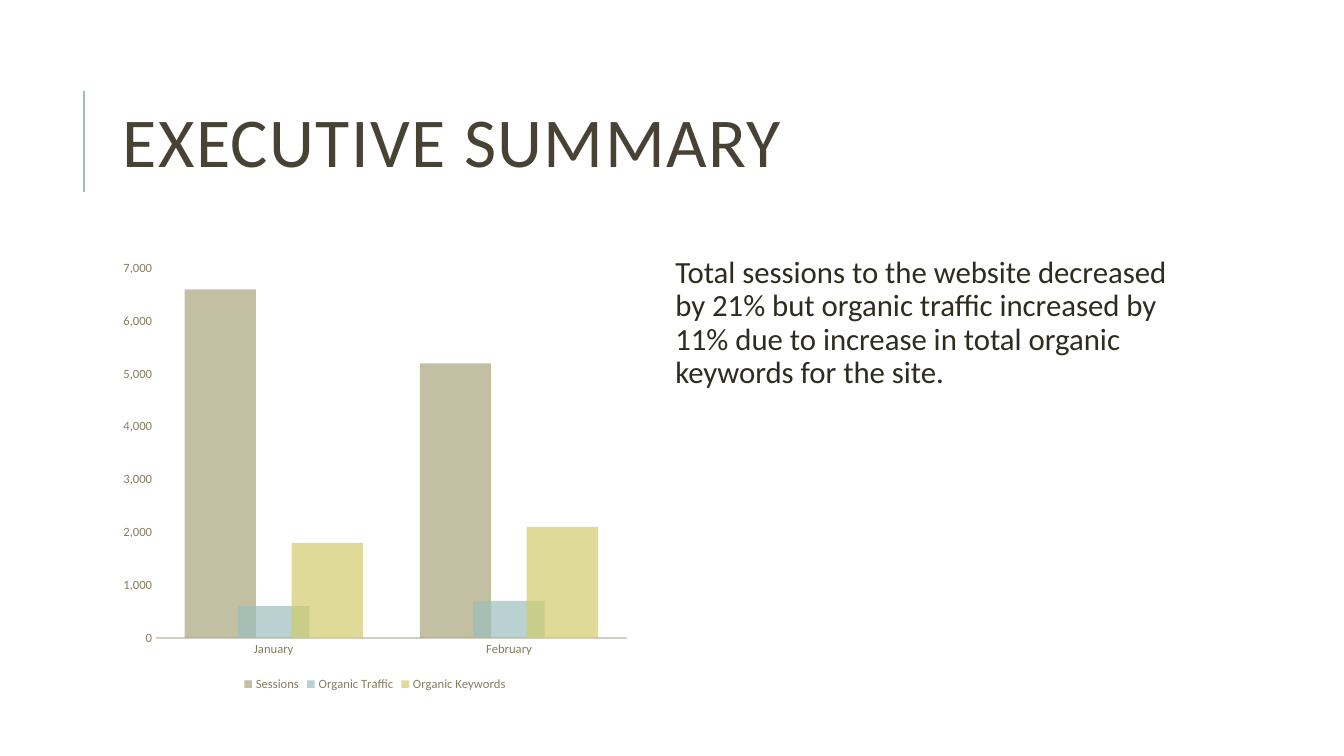
from dataclasses import dataclass

from lxml.etree import SubElement
from pptx import Presentation
from pptx.chart.data import CategoryChartData
from pptx.dml.color import RGBColor
from pptx.enum.chart import XL_CHART_TYPE as ChartType
from pptx.enum.chart import XL_LEGEND_POSITION as LegendPosition
from pptx.enum.chart import XL_TICK_MARK as TickMark
from pptx.enum.shapes import MSO_CONNECTOR as Connector
from pptx.enum.text import MSO_ANCHOR as Anchor
from pptx.enum.text import MSO_AUTO_SIZE as AutoSize
from pptx.enum.text import PP_ALIGN as Align
from pptx.oxml.ns import qn
from pptx.util import Pt


@dataclass(frozen=True)
class Theme:
    font: str = "Calibri"
    title: str = "474233"
    body: str = "2E2B21"
    label: str = "867D60"
    axis: str = "D2CEC0"
    accent: str = "9CBEBD"
    series: tuple = ("A9A57C", "9CBEBD", "D2CB6C")
    series_opacity: int = 70
    title_size: int = 50
    body_size: int = 22
    chart_size: int = 10
    label_size: int = 9


THEME = Theme()
LEFT, CONTENT_TOP = 80.64, 180
COLUMN_WIDTH, COLUMN_HEIGHT, COLUMN_GAP = 374.4, 316.8, 16.56

MONTHS = ("January", "February")
TRAFFIC = {
    "Sessions": (6600, 5200),
    "Organic Traffic": (600, 700),
    "Organic Keywords": (1800, 2100),
}
SUMMARY = (
    "Total sessions to the website decreased by 21% but organic traffic "
    "increased by 11% due to increase in total organic keywords for the site."
)


def color(value):
    return RGBColor.from_string(value)


def style_font(font, size, value):
    font.name, font.size, font.bold = THEME.font, Pt(size), False
    font.color.rgb = color(value)


def add_title(page, text):
    title = page.shapes.title
    title.left, title.top = Pt(LEFT), Pt(46.08)
    title.width, title.height = Pt(765.36), Pt(118.08)
    frame = title.text_frame
    frame.text = text
    frame.auto_size = AutoSize.NONE
    frame.vertical_anchor = Anchor.MIDDLE
    para = frame.paragraphs[0]
    para.alignment, para.line_spacing = Align.LEFT, 0.8
    style_font(para.font, THEME.title_size, THEME.title)
    para.runs[0].font._element.set("spc", "100")


def add_title_rule(page):
    rule = page.shapes.add_connector(
        Connector.STRAIGHT, Pt(60), Pt(136.8), Pt(60), Pt(64.8))
    rule.line.color.rgb = color(THEME.accent)
    rule.line.width = Pt(1.5)
    SubElement(rule._element.spPr, qn("a:effectLst"))


def add_body(page, text, left):
    box = page.shapes.add_textbox(
        Pt(left), Pt(CONTENT_TOP), Pt(COLUMN_WIDTH), Pt(COLUMN_HEIGHT))
    frame = box.text_frame
    frame.word_wrap = True
    frame.margin_left = Pt(10.8)
    frame.margin_top = frame.margin_right = frame.margin_bottom = Pt(3.6)
    para = frame.paragraphs[0]
    para.text = text
    para.line_spacing = 0.9
    para.space_before, para.space_after = Pt(12), Pt(2)
    style_font(para.font, THEME.body_size, THEME.body)


def style_axis(axis):
    axis.has_major_gridlines = False
    axis.major_tick_mark = axis.minor_tick_mark = TickMark.NONE
    style_font(axis.tick_labels.font, THEME.label_size, THEME.label)


def fill_series(series, value):
    fill = series.format.fill
    fill.solid()
    fill.fore_color.rgb = color(value)
    shade = series.format._element.spPr if hasattr(series.format, "_element") else series._element.spPr
    alpha = SubElement(shade.find(".//" + qn("a:srgbClr")), qn("a:alpha"))
    alpha.set("val", str(THEME.series_opacity * 1000))


def add_column_chart(page, months, traffic):
    data = CategoryChartData(number_format="#,##0")
    data.categories = months
    for name, values in traffic.items():
        data.add_series(name, values)
    chart = page.shapes.add_chart(
        ChartType.COLUMN_CLUSTERED, Pt(LEFT), Pt(CONTENT_TOP),
        Pt(COLUMN_WIDTH), Pt(COLUMN_HEIGHT), data).chart
    style_font(chart.font, THEME.chart_size, THEME.body)
    chart.has_title = False

    chart.has_legend = True
    chart.legend.position = LegendPosition.BOTTOM
    chart.legend.include_in_layout = False
    style_font(chart.legend.font, THEME.label_size, THEME.label)

    months_axis, count_axis = chart.category_axis, chart.value_axis
    style_axis(months_axis)
    months_axis.format.line.color.rgb = color(THEME.axis)
    months_axis.format.line.width = Pt(1.25)
    style_axis(count_axis)
    count_axis.format.line.fill.background()
    count_axis.minimum_scale, count_axis.maximum_scale = 0, 7000
    count_axis.major_unit = 1000
    count_axis.tick_labels.number_format = "#,##0"
    count_axis.tick_labels.number_format_is_linked = False

    plot = chart.plots[0]
    plot.gap_width, plot.overlap = 80, 25
    plot.vary_by_categories = False
    for series, value in zip(plot.series, THEME.series):
        fill_series(series, value)


def main():
    deck = Presentation()
    deck.slide_width, deck.slide_height = Pt(960), Pt(540)
    page = deck.slides.add_slide(deck.slide_layouts.get_by_name("Title Only"))
    add_title_rule(page)
    add_title(page, "EXECUTIVE SUMMARY")
    add_body(page, SUMMARY, LEFT + COLUMN_WIDTH + COLUMN_GAP)
    add_column_chart(page, MONTHS, TRAFFIC)
    deck.save("out.pptx")


if __name__ == "__main__":
    main()
